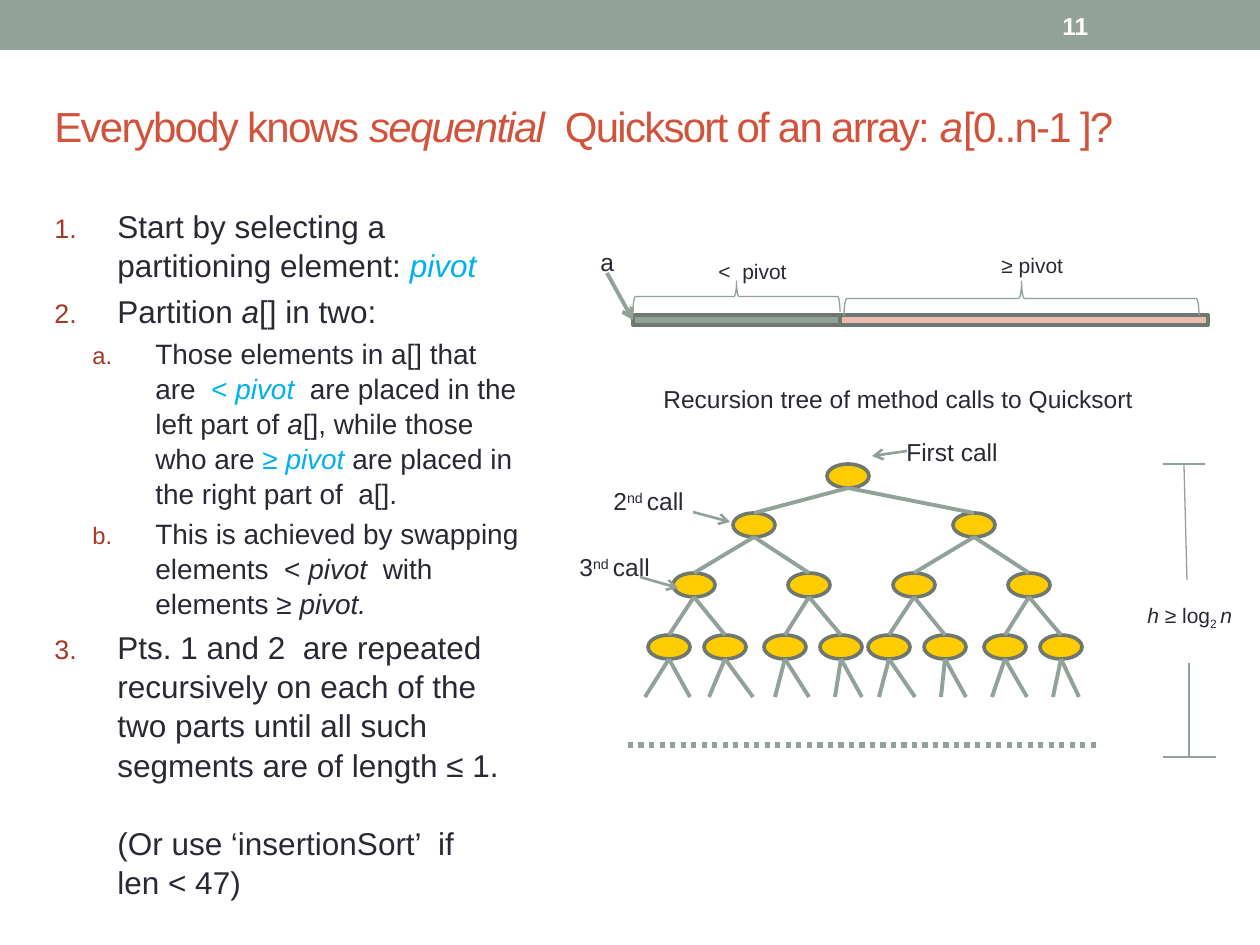
"""Build a slide on sequential Quicksort with its recursion tree."""
from dataclasses import dataclass

from pptx import Presentation
from pptx.dml.color import RGBColor
from pptx.enum.dml import MSO_LINE
from pptx.enum.shapes import MSO_CONNECTOR, MSO_SHAPE
from pptx.enum.text import MSO_ANCHOR
from pptx.oxml.ns import qn
from pptx.oxml.xmlchemy import OxmlElement
from pptx.util import Emu, Pt

SCALE = 914400 / 126
RECT, OVAL, BRACE = MSO_SHAPE.RECTANGLE, MSO_SHAPE.OVAL, MSO_SHAPE.LEFT_BRACE
TOP, MIDDLE = MSO_ANCHOR.TOP, MSO_ANCHOR.MIDDLE
DOTS = MSO_LINE.ROUND_DOT
STRAIGHT = MSO_CONNECTOR.STRAIGHT


@dataclass(frozen=True)
class Theme:
    """Colours, font and type sizes of the slide."""
    font: str = "Arial"
    sage: str = "93A299"
    edge: str = "6D7871"
    rose: str = "EDBAB1"
    gold: str = "FFCC00"
    ink: str = "292934"
    red: str = "D2533C"
    mark: str = "A53926"
    blue: str = "00B0F0"
    white: str = "FFFFFF"
    title: int = 24
    body: int = 18
    sub: int = 16
    label: int = 14
    small: int = 12


T = Theme()
SLANT = {"italic": True}
CYAN = {"color": T.blue}
KEY = {**CYAN, **SLANT}
RAISE = {"baseline": "30000"}

TITLE = [("Everybody knows ", {}), ("sequential", SLANT),
         ("  Quicksort of an array: ", {}), ("a", SLANT), ("[0..n-1 ]?", {})]
STEPS = [
    (0, [("Start by selecting a partitioning element: ", {}), ("pivot", KEY)]),
    (0, [("Partition ", {}), ("a", SLANT), ("[] in two:", {})]),
    (1, [("Those elements in a[] that are  ", {}), ("< ", CYAN), ("pivot  ", KEY),
         ("are placed in the left part of ", {}), ("a", SLANT),
         ("[], while those who are ", {}), ("≥ ", CYAN), ("pivot ", KEY),
         ("are placed in the right part of  a[].", {})]),
    (1, [("This is achieved by swapping elements  < ", {}), ("pivot ", SLANT),
         (" with\nelements ≥ ", {}), ("pivot.", SLANT)]),
    (0, [("Pts. 1 and 2  are repeated recursively on each of the two parts until "
          "all such segments are of length ≤ 1.\n\n(Or use ‘insertionSort’  if \n"
          "len < 47)", {})]),
]
HEIGHT = [("h", SLANT), (" ≥ log", {}), ("2 ", {"baseline": "-25000"}), ("n", SLANT)]
LABELS = [
    ((588, 241, 53, 43), T.label, [("a", {})]),
    ((706, 252, 96, 38), T.small, [("<  pivot", {})]),
    ((989, 246, 96, 38), T.small, [("≥ pivot", {})]),
    ((651, 378, 577, 43), T.label, [("Recursion tree of method calls to Quicksort", {})]),
    ((894, 431, 166, 43), T.label, [("First call", {})]),
    ((601, 480, 117, 43), T.label, [("2", {}), ("nd ", RAISE), ("call", {})]),
    ((567, 546, 117, 43), T.label, [("3", {}), ("nd ", RAISE), ("call", {})]),
]
ARROWS = [((607, 273), (633, 320), 2.25), ((907, 451), (872, 456), 1.5),
          ((693, 512), (730, 522), 1.5), ((640, 577), (678, 588), 1.5)]
RULES = [((1163, 464), (1205, 464)), ((1163, 757), (1216, 757)),
         ((1184, 464), (1187, 580)), ((1189, 663), (1189, 757))]

NODE_W, NODE_H, SHIFT = 42, 24, 220
ROWS = [464, 513, 573, 635, 697]
HALF = [[754], [694, 809], [669, 725, 785, 841]]
TIPS = [645, 690, 709, 753, 775, 809, 835, 862,
        879, 915, 941, 966, 992, 1027, 1053, 1079]


def px(*values):
    """Turn whole pixels into EMU lengths."""
    return [Emu(round(v * SCALE)) for v in values]


def tint(hue):
    """Return a colour from its hex code."""
    return RGBColor.from_string(hue)


def add_shape(slide, kind, box, fill, edge, width=2.08, turn=0):
    """Add a preset shape; None leaves out its fill or line."""
    shape = slide.shapes.add_shape(kind, *px(*box))
    shape.shadow.inherit = False
    shape.rotation = turn
    for part, hue in ((shape.fill, fill), (shape.line.fill, edge)):
        if hue:
            part.solid()
            part.fore_color.rgb = tint(hue)
        else:
            part.background()
    if edge:
        shape.line.width = Pt(width)


def add_line(slide, start, end, width=2.25, dash=None, arrow=False):
    """Add a straight line, with an arrowhead at its end if asked."""
    line = slide.shapes.add_connector(STRAIGHT, *px(*start, *end))
    line.line.color.rgb = tint(T.sage)
    line.line.width = Pt(width)
    if dash:
        line.line.dash_style = dash
    props = line._element.spPr
    if arrow:
        head = OxmlElement("a:tailEnd")
        head.set("type", "arrow")
        props.find(qn("a:ln")).append(head)
    props.append(OxmlElement("a:effectLst"))


def add_box(slide, box, anchor=TOP, wrap=True):
    """Add an empty text box and return its frame."""
    frame = slide.shapes.add_textbox(*px(*box)).text_frame
    for name, value in {"word_wrap": wrap, "vertical_anchor": anchor}.items():
        setattr(frame, name, value)
    return frame


def add_runs(para, runs, size, color=T.ink, bold=False, track=None):
    """Fill a paragraph with styled runs and line breaks."""
    for words, style in runs:
        for count, words in enumerate(words.split("\n")):
            if count:
                para.add_line_break()
            if not words:
                continue
            run = para.add_run()
            run.text = words
            look = {"name": T.font, "size": Pt(size), "bold": bold,
                    "italic": style.get("italic", False)}
            for name, value in look.items():
                setattr(run.font, name, value)
            run.font.color.rgb = tint(style.get("color", color))
            extra = {"baseline": style.get("baseline"), "spc": track}
            for name, value in extra.items():
                if value:
                    run._r.get_or_add_rPr().set(name, value)


def add_mark(para, level):
    """Number a paragraph with a hanging indent."""
    props = para._p.get_or_add_pPr()
    left, hang = px((63, 101)[level], -63)
    props.set("marL", str(left))
    props.set("indent", str(hang))
    color, size, count = (OxmlElement(f"a:{tag}") for tag in ("buClr", "buSzPct", "buAutoNum"))
    hue = OxmlElement("a:srgbClr")
    hue.set("val", T.mark)
    color.append(hue)
    size.set("val", "85000")
    count.set("type", ("arabicPeriod", "alphaLcPeriod")[level])
    props.extend([color, size, count])


def add_steps(slide):
    """Add the numbered list of steps."""
    frame = add_box(slide, (42, 199, 494, 672))
    for index, (level, runs) in enumerate(STEPS):
        para = frame.add_paragraph() if index else frame.paragraphs[0]
        size = (T.body, T.sub)[level]
        add_mark(para, level)
        look = {"level": level, "line_spacing": 1.04,
                "space_before": Pt(size * 0.2 if index else 0)}
        for name, value in look.items():
            setattr(para, name, value)
        add_runs(para, runs, size)


def add_tree(slide):
    """Add the tree of calls, each row linked to the one above."""
    rows = [[848]] + [half + [x + SHIFT for x in half] for half in HALF]
    for row, top in zip(rows, ROWS):
        for x in row:
            add_shape(slide, OVAL, (x - NODE_W // 2, top, NODE_W, NODE_H), T.gold, T.edge)
    for above, row, high, low in zip(rows, rows[1:] + [TIPS], ROWS, ROWS[1:]):
        for index, x in enumerate(row):
            add_line(slide, (x, low), (above[index // 2], high + NODE_H))
    add_line(slide, (628, 745), (1100, 745), 3, DOTS)


def add_array(slide):
    """Add the split array with a brace over each part."""
    for left, fill in ((633, T.sage), (840, T.rose)):
        width = 840 - left or 368
        add_shape(slide, RECT, (left, 315, 368 if fill == T.sage else width, 10), fill, T.edge)
    for box in ((721, 193, 31, 207), (1004, 121, 35, 355)):
        add_shape(slide, BRACE, box, None, T.sage, 0.75, 90)


def main():
    """Build and save the slide."""
    deck = Presentation()
    deck.slide_width, deck.slide_height = px(1260, 945)
    slide = deck.slides.add_slide(deck.slide_layouts[6])
    add_shape(slide, RECT, (0, 0, 1260, 50), T.sage, None)
    title = add_box(slide, (42, 73, 1134, 105), MIDDLE)
    add_runs(title.paragraphs[0], TITLE, T.title, T.red, track="-100")
    page = add_box(slide, (1050, 3, 147, 45), MIDDLE)
    add_runs(page.paragraphs[0], [("11", {})], T.label, T.white, True)
    add_steps(slide)
    add_tree(slide)
    add_array(slide)
    for start, end in RULES:
        add_line(slide, start, end, 0.75)
    for start, end, width in ARROWS:
        add_line(slide, start, end, width, arrow=True)
    for box, size, runs in LABELS:
        add_runs(add_box(slide, box).paragraphs[0], runs, size)
    height = add_box(slide, (1135, 596, 112, 38), wrap=False)
    add_runs(height.paragraphs[0], HEIGHT, T.small)
    deck.save("out.pptx")


if __name__ == "__main__":
    main()
